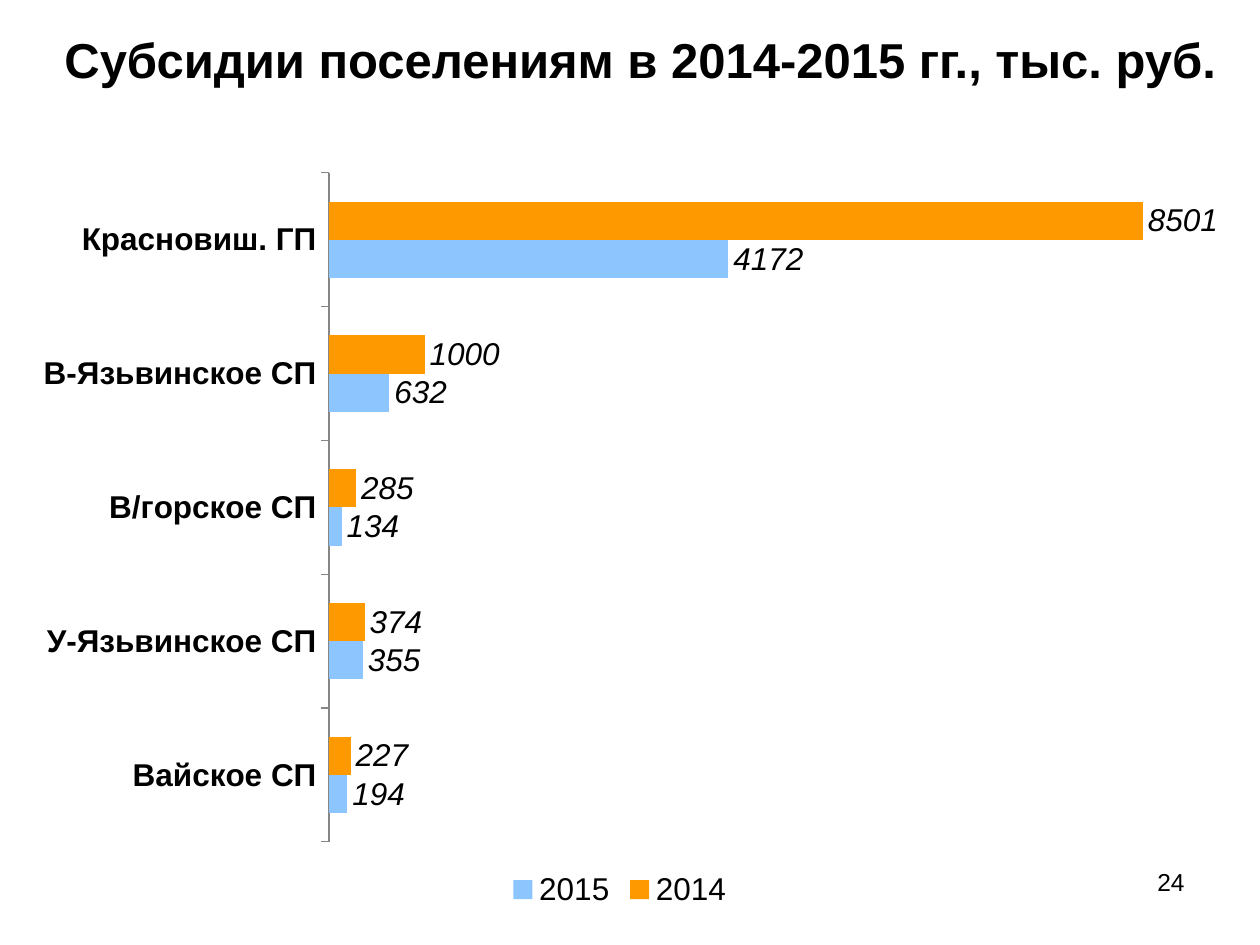
from lxml import etree
from pptx import Presentation
from pptx import util as u
from pptx.chart.data import CategoryChartData
from pptx.dml.color import RGBColor
from pptx.enum import chart as ch, text

# Content
TITLE = "Субсидии поселениям в 2014-2015 гг., тыс. руб."
PAGE = "24"
PLACES = ["Красновиш. ГП", "В-Язьвинское СП", "В/горское СП",
          "У-Язьвинское СП", "Вайское СП"]
BLACK = RGBColor(0, 0, 0)
ORANGE = RGBColor(0xFF, 0x99, 0x00)
BLUE = RGBColor(0x8D, 0xC6, 0xFF)
GREY = RGBColor(0x86, 0x86, 0x86)
YEARS = [("2014", [8501, 1000, 285, 374, 227], ORANGE),
         ("2015", [4172, 632, 134, 355, 194], BLUE)]
PLOT = {"x": 0.257, "y": 0.02, "w": 0.72, "h": 0.885}  # shares of the chart
FONT = "Arial"


def style(font, size, bold=False, italic=False):
    font.name, font.size = FONT, u.Pt(size)
    font.bold, font.italic = bold, italic
    font.color.rgb = BLACK


def label(slide, box, words, size, align, anchor, bold=False):
    frame = slide.shapes.add_textbox(*map(u.Cm, box)).text_frame
    frame.word_wrap = True
    frame.vertical_anchor = anchor
    para = frame.paragraphs[0]
    para.text, para.alignment = words, align
    style(para.font, size, bold)


def place_plot(chart):
    """Fix the inner plot area by shares of the chart."""
    area = chart.plots[0]._element.getparent()
    ns = etree.QName(area).namespace
    for old in area.findall(f"{{{ns}}}layout"):
        area.remove(old)
    layout = etree.Element(f"{{{ns}}}layout")
    manual = etree.SubElement(layout, f"{{{ns}}}manualLayout")
    parts = {"layoutTarget": "inner", "xMode": "edge", "yMode": "edge", **PLOT}
    for tag, val in parts.items():
        etree.SubElement(manual, f"{{{ns}}}{tag}").set("val", str(val))
    area.insert(0, layout)


def add_bars(slide):
    data = CategoryChartData()
    data.categories = PLACES
    for name, vals, _ in YEARS:
        data.add_series(name, vals)
    box = map(u.Cm, (0.43, 3.18, 24.13, 15.24))
    chart = slide.shapes.add_chart(
        ch.XL_CHART_TYPE.BAR_CLUSTERED, *box, data).chart
    style(chart.font, 18)
    chart.has_title = False
    chart.has_legend = True
    chart.legend.position = ch.XL_LEGEND_POSITION.BOTTOM
    chart.legend.include_in_layout = False
    style(chart.legend.font, 18)

    # Axes
    cats, vals = chart.category_axis, chart.value_axis
    cats.reverse_order = True
    cats.major_tick_mark = ch.XL_TICK_MARK.OUTSIDE
    cats.format.line.color.rgb = GREY
    style(cats.tick_labels.font, 18, bold=True)
    vals.visible = False
    vals.has_major_gridlines = False
    vals.minimum_scale, vals.maximum_scale = 0, 9000

    # Bars and their values
    plot = chart.plots[0]
    plot.gap_width, plot.overlap = 150, 0
    plot.vary_by_categories = False
    for bars, (_, _, color) in zip(plot.series, YEARS):
        bars.format.fill.solid()
        bars.format.fill.fore_color.rgb = color
        tags = bars.data_labels
        tags.show_value = True
        tags.position = ch.XL_LABEL_POSITION.OUTSIDE_END
        style(tags.font, 18, italic=True)
    place_plot(chart)


def main():
    deck = Presentation()
    deck.slide_width, deck.slide_height = u.Cm(25.4), u.Cm(19.05)
    slide = deck.slides.add_slide(deck.slide_layouts[6])
    label(slide, (0.84, 0.2, 24.13, 1.98), TITLE, 28, text.PP_ALIGN.CENTER,
          text.MSO_ANCHOR.MIDDLE, bold=True)
    add_bars(slide)
    label(slide, (18.21, 17.35, 5.92, 1.32), PAGE, 14, text.PP_ALIGN.RIGHT,
          text.MSO_ANCHOR.TOP)
    deck.save("out.pptx")


if __name__ == "__main__":
    main()
